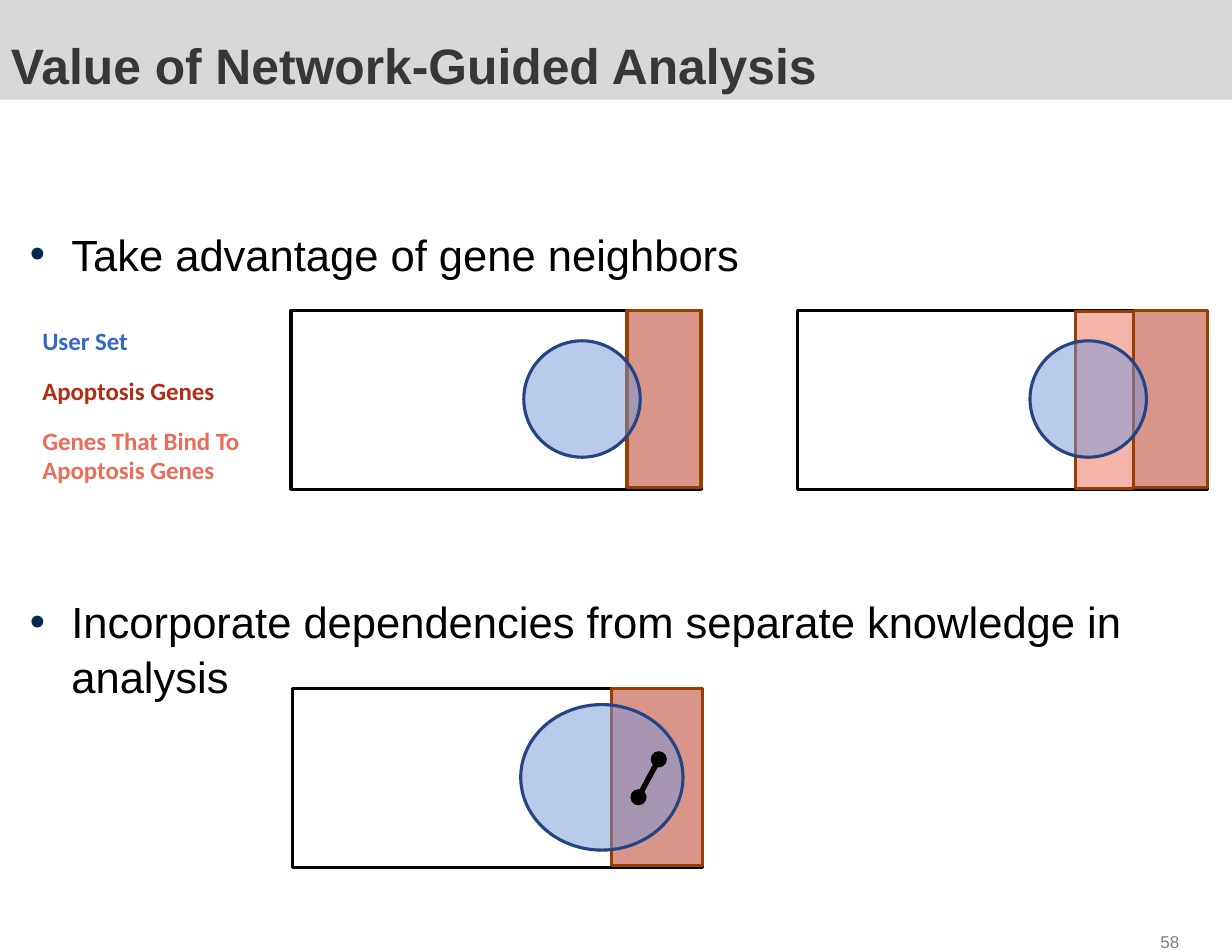
from lxml import etree
from pptx import Presentation
from pptx.dml.color import RGBColor
from pptx.enum.shapes import MSO_CONNECTOR, MSO_SHAPE
from pptx.enum.text import MSO_ANCHOR, PP_ALIGN
from pptx.oxml.ns import qn
from pptx.util import Cm, Pt

RECT, OVAL = MSO_SHAPE.RECTANGLE, MSO_SHAPE.OVAL
STRAIGHT = MSO_CONNECTOR.STRAIGHT
TOP, BOTTOM = MSO_ANCHOR.TOP, MSO_ANCHOR.BOTTOM
LEFT, RIGHT = PP_ALIGN.LEFT, PP_ALIGN.RIGHT

COLORS = {
    "white": "FFFFFF", "black": "000000", "banner": "D8D8D8",
    "title": "373737", "number": "7F7F7F", "bullet": "05284E",
    "user": "7598D9", "user_line": "244582", "user_text": "3667C4",
    "genes": "B32C16", "binders": "EA6D59", "gene_line": "993D00",
}
PANEL_W, PANEL_H = 9.3, 4.06
STRIP_H = 4.01


def rgb(name):
    return RGBColor.from_string(COLORS[name])


def add_box(s, kind, x, y, w, h, fill, line=None, alpha=None):
    sp = s.shapes.add_shape(kind, Cm(x), Cm(y), Cm(w), Cm(h))
    sp.shadow.inherit = False
    sp.fill.solid()
    sp.fill.fore_color.rgb = rgb(fill)
    if alpha:
        color = sp.fill._xPr.find(qn("a:solidFill"))[0]
        etree.SubElement(color, qn("a:alpha"), val=str(alpha * 1000))
    if line:
        sp.line.color.rgb = rgb(line)
        sp.line.width = Pt(2)
    else:
        sp.line.fill.background()
    return sp


def add_text_box(s, x, y, w, h):
    return s.shapes.add_textbox(Cm(x), Cm(y), Cm(w), Cm(h))


def add_bullet(p):
    pPr = p._p.get_or_add_pPr()
    pPr.set("marL", str(Cm(0.94)))
    pPr.set("indent", str(-Cm(0.94)))
    color = etree.SubElement(pPr, qn("a:buClr"))
    etree.SubElement(color, qn("a:srgbClr"), val=COLORS["bullet"])
    etree.SubElement(pPr, qn("a:buFont"), typeface="Arial")
    etree.SubElement(pPr, qn("a:buChar"), char="•")


def set_text(sp, *texts, size, color, font="Arial", bold=False, align=LEFT,
             anchor=TOP, bullet=False, gap=0, spacing=None):
    tf = sp.text_frame
    tf.word_wrap = True
    tf.vertical_anchor = anchor
    for i, text in enumerate(texts):
        p = tf.add_paragraph() if i else tf.paragraphs[0]
        p.alignment = align
        if i:
            p.space_before = Pt(gap)
        if spacing:
            p.line_spacing = spacing
        if bullet:
            add_bullet(p)
        r = p.add_run()
        r.text = text
        r.font.name, r.font.size, r.font.bold = font, Pt(size), bold
        r.font.color.rgb = rgb(color)


def add_venn(s, x, y, strip_w, circle, binders_w=0):
    add_box(s, RECT, x, y, PANEL_W, PANEL_H, "white", "black")
    strip_x = x + PANEL_W - strip_w
    add_box(s, RECT, strip_x, y, strip_w, STRIP_H, "genes", "gene_line", 50)
    if binders_w:
        add_box(s, RECT, strip_x - binders_w, y + 0.03, binders_w, STRIP_H,
                "binders", "gene_line", 50)
    dx, dy, w, h = circle
    add_box(s, OVAL, x + dx, y + dy, w, h, "user", "user_line", 50)


def add_link(s, x1, y1, x2, y2):
    c = s.shapes.add_connector(STRAIGHT, Cm(x1), Cm(y1), Cm(x2), Cm(y2))
    c.line.color.rgb = rgb("black")
    c.line.width = Pt(3.5)
    ln = c.line._get_or_add_ln()
    for end in ("a:headEnd", "a:tailEnd"):
        etree.SubElement(ln, qn(end), type="oval")
    etree.SubElement(c._element.spPr, qn("a:effectLst"))


def main():
    prs = Presentation()
    prs.slide_width, prs.slide_height = Cm(27.94), Cm(21.59)
    s = prs.slides.add_slide(prs.slide_layouts[6])

    banner = add_box(s, RECT, 0, 0, 27.94, 2.26, "banner")
    set_text(banner, "Value of Network-Guided Analysis", size=32,
             color="title", bold=True, anchor=BOTTOM)
    number = add_text_box(s, 23.42, 21.03, 3.58, 0.51)
    number.text_frame.margin_top = Cm(0.1)
    set_text(number, "58", size=11, color="number", align=RIGHT)
    body = add_text_box(s, 0.43, 4.98, 28.22, 13.34)
    set_text(body, "Take advantage of gene neighbors",
             "Incorporate dependencies from separate knowledge in analysis",
             size=28, color="black", bullet=True, gap=201, spacing=1.05)

    small = (5.28, 0.69, 2.64, 2.64)
    large = (5.18, 0.36, 3.68, 3.3)
    add_venn(s, 6.63, 15.62, 2.06, large)
    add_venn(s, 6.6, 7.04, 1.68, small)
    add_venn(s, 18.08, 7.04, 1.68, small, binders_w=1.3)
    add_link(s, 14.48, 18.08, 14.94, 17.22)

    labels = [
        ("User Set", "user_text", 2.72, 0.94),
        ("Apoptosis Genes", "genes", 4.6, 0.94),
        ("Genes That Bind To Apoptosis Genes", "binders", 5.11, 1.63),
    ]
    for i, (text, color, w, h) in enumerate(labels):
        label = add_text_box(s, 0.71, 7.26 + 1.13 * i, w, h)
        set_text(label, text, size=16, color=color, font="Calibri", bold=True)

    prs.save("out.pptx")


if __name__ == "__main__":
    main()
